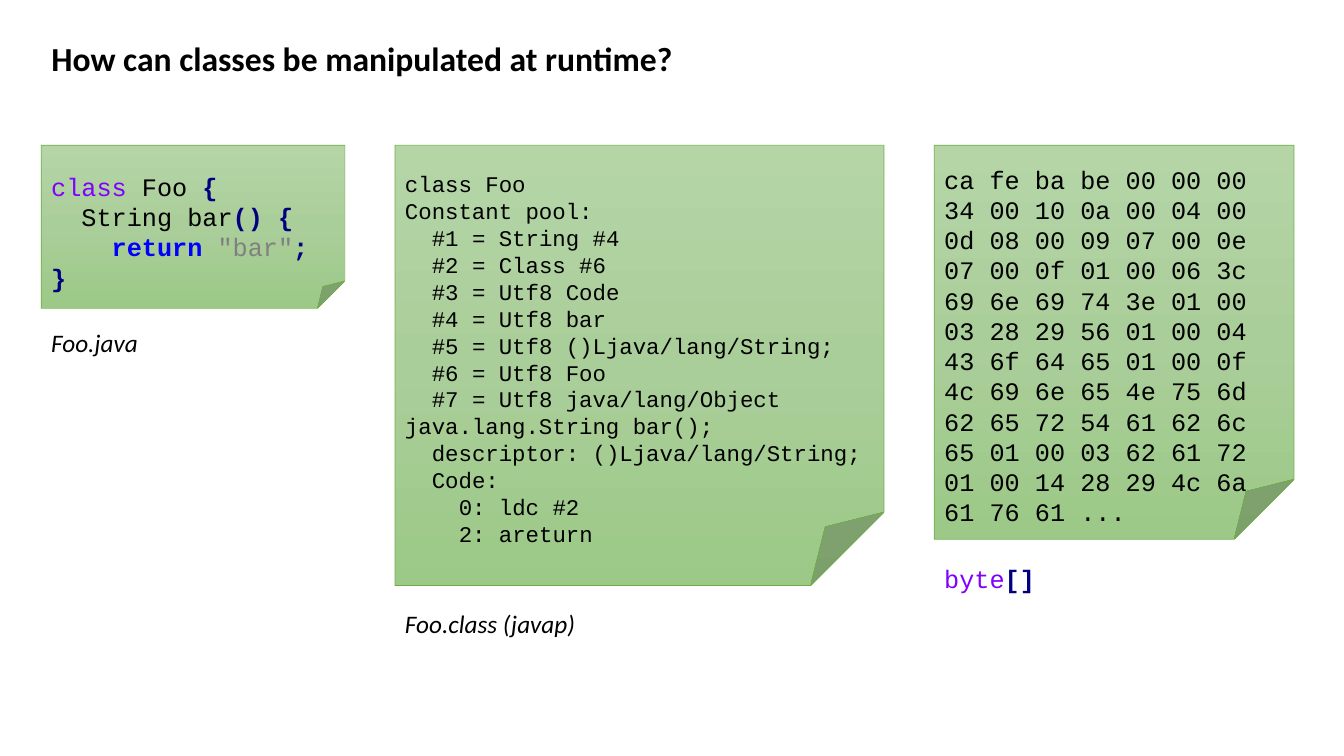
from copy import deepcopy

from pptx import Presentation
from pptx.dml.color import RGBColor
from pptx.enum.shapes import MSO_SHAPE
from pptx.enum.text import MSO_ANCHOR, MSO_AUTO_SIZE, PP_ALIGN
from pptx.oxml.ns import qn
from pptx.util import Pt

FOLD = MSO_SHAPE.FOLDED_CORNER
TOP = MSO_ANCHOR.TOP
LEFT = PP_ALIGN.LEFT
GROW = MSO_AUTO_SIZE.SHAPE_TO_FIT_TEXT

CODE = "Courier New"
BODY = "Calibri"
BLACK = "000000"
VIOLET = "8000FF"
NAVY = "000080"
BLUE = "0000FF"
GREY = "808080"
GREENS = ["B5D5A7", "AACE9A", "9CC987"]
NOTE_TOP = 103.7
COLS = [29.5, 282.2, 667.4]

JAVA = [
    (0, [("class ", VIOLET, False), ("Foo ", BLACK, False), ("{", NAVY, True)]),
    (2, [("String bar", BLACK, False), ("() {", NAVY, True)]),
    (4, [("return ", BLUE, True), ('"bar"', GREY, False), (";", NAVY, True)]),
    (0, [("}", NAVY, True)]),
]
JAVAP = [
    (0, "class Foo"),
    (0, "Constant pool:"),
    (2, "#1 = String #4"),
    (2, "#2 = Class #6"),
    (2, "#3 = Utf8 Code"),
    (2, "#4 = Utf8 bar"),
    (2, "#5 = Utf8 ()Ljava/lang/String;"),
    (2, "#6 = Utf8 Foo"),
    (2, "#7 = Utf8 java/lang/Object"),
    (0, "java.lang.String bar();"),
    (2, "descriptor: ()Ljava/lang/String;"),
    (2, "Code:"),
    (4, "0: ldc #2"),
    (4, "2: areturn"),
]
BYTES = (
    "ca fe ba be 00 00 00 34 00 10 0a 00 04 00 0d 08 00 09 07 00 0e "
    "07 00 0f 01 00 06 3c 69 6e 69 74 3e 01 00 03 28 29 56 01 00 04 "
    "43 6f 64 65 01 00 0f 4c 69 6e 65 4e 75 6d 62 65 72 54 61 62 6c "
    "65 01 00 03 62 61 72 01 00 14 28 29 4c 6a 61 76 61 ..."
)


def paint(color, value):
    color.rgb = RGBColor.from_string(value)


def write(frame, lines, face, size, bold=False, italic=False):
    for i, (depth, parts) in enumerate(lines):
        para = frame.paragraphs[0] if i == 0 else frame.add_paragraph()
        para.alignment = LEFT
        font = para.font
        font.name, font.size = face, Pt(size)
        font.italic = italic
        if depth:
            para._p.get_or_add_pPr().set("marL", str(Pt(depth * size * 0.6)))
        if isinstance(parts, str):
            font.bold = bold
            paint(font.color, BLACK)
            para.add_run().text = parts
            continue
        for text, color, strong in parts:
            run = para.add_run()
            run.text = text
            run.font.bold = strong
            paint(run.font.color, color)


def shade(shape):
    fill = shape.fill
    fill.gradient()
    fill.gradient_angle = 270
    stops = shape._element.spPr.find(qn("a:gradFill")).find(qn("a:gsLst"))
    stops.insert(1, deepcopy(stops[0]))
    for i, (stop, color) in enumerate(zip(fill.gradient_stops, GREENS)):
        stop.position = i / 2
        paint(stop.color, color)


def note(slide, left, width, height, inset, lines, size):
    shape = slide.shapes.add_shape(FOLD, Pt(left), Pt(NOTE_TOP), Pt(width), Pt(height))
    shape.shadow.inherit = False
    shade(shape)
    paint(shape.line.color, "70AD47")
    shape.line.width = Pt(0.5)
    frame = shape.text_frame
    frame.word_wrap = True
    frame.vertical_anchor = TOP
    frame.margin_top, frame.margin_bottom = Pt(inset), 0
    write(frame, lines, CODE, size)


def label(slide, left, top, width, parts, face, italic):
    box = slide.shapes.add_textbox(Pt(left), Pt(top), Pt(width), Pt(29))
    frame = box.text_frame
    frame.word_wrap = False
    frame.auto_size = GROW
    write(frame, [(0, parts)], face, 18, italic=italic)


def head(slide, text):
    title = slide.shapes.title
    title.left, title.top = Pt(COLS[0]), Pt(23.8)
    title.width, title.height = Pt(463), Pt(36)
    frame = title.text_frame
    frame.word_wrap = False
    frame.auto_size = GROW
    frame.vertical_anchor = TOP
    write(frame, [(0, text)], BODY, 24, bold=True)


def main():
    deck = Presentation()
    deck.slide_width, deck.slide_height = Pt(960), Pt(540)
    slide = deck.slides.add_slide(deck.slide_layouts[5])
    head(slide, "How can classes be manipulated at runtime?")
    java, javap, data = COLS
    note(slide, java, 216.7, 116.6, 18.5, JAVA, 18)
    note(slide, javap, 349.2, 314.6, 18.2, JAVAP, 16)
    note(slide, data, 257, 281.5, 13.5, [(0, BYTES)], 18)
    label(slide, java, 230.4, 77, "Foo.java", BODY, True)
    label(slide, javap, 430.6, 137.5, "Foo.class (javap)", BODY, True)
    label(slide, data, 398.9, 90.7,
          [("byte", VIOLET, False), ("[]", NAVY, True)], CODE, False)
    deck.save("out.pptx")


if __name__ == "__main__":
    main()
